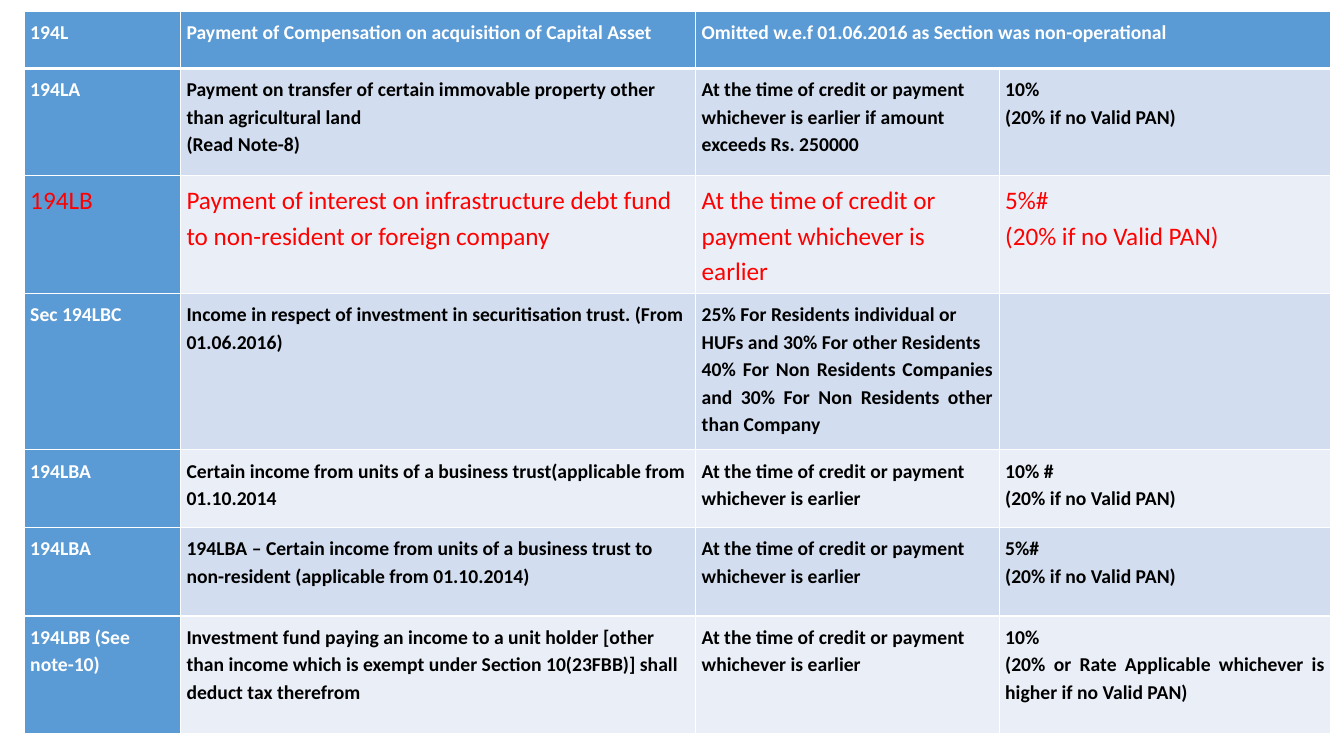
from lxml import etree
from pptx import Presentation
from pptx.dml.color import RGBColor
from pptx.enum import text
from pptx.oxml import ns
from pptx.util import Inches, Pt

COLORS = {"blue": "5B9BD5", "band": "D2DEEF", "pale": "EAEFF7",
          "white": "FFFFFF", "black": "000000", "red": "FF0000"}

ON_CREDIT = "At the time of credit or payment whichever is earlier"
NO_PAN = "(20% if no Valid PAN)"

# Section, nature of payment, time of deduction, rate; a newline starts a paragraph
ROWS = [
    ("194L", "Payment of Compensation on acquisition of Capital Asset",
     "Omitted w.e.f 01.06.2016 as Section was non-operational", ""),
    ("194LA", "Payment on transfer of certain immovable property other than "
     "agricultural land\n(Read Note-8)",
     ON_CREDIT + " if amount exceeds Rs. 250000", "10%\n" + NO_PAN),
    ("194LB", "Payment of interest on infrastructure debt fund to non-resident "
     "or foreign company", ON_CREDIT, "5%#\n" + NO_PAN),
    ("Sec 194LBC", "Income in respect of investment in securitisation trust. "
     "(From 01.06.2016)",
     "25% For Residents individual or HUFs and 30% For other Residents\n"
     "40% For Non Residents Companies and 30% For Non Residents other than Company", ""),
    ("194LBA", "Certain income from units of a business trust(applicable from 01.10.2014",
     ON_CREDIT, "10% #\n" + NO_PAN),
    ("194LBA", "194LBA – Certain income from units of a business trust to "
     "non-resident (applicable from 01.10.2014)", ON_CREDIT, "5%#\n" + NO_PAN),
    ("194LBB (See note-10)", "Investment fund paying an income to a unit holder "
     "[other than income which is exempt under Section 10(23FBB)] shall deduct "
     "tax therefrom", ON_CREDIT,
     "10%\n(20% or Rate Applicable whichever is higher if no Valid PAN)"),
]
WIDTHS = [1.55, 5.11, 3.01, 3.29]
HEIGHTS = [0.57, 1.06, 0.92, 1.55, 0.77, 0.88, 1.17]
RED_ROW = 2
INSET = Inches(0.06)


def set_borders(cell, row):
    """Thin white grid with a heavy rule under the header row."""
    heavy = {(0, "B"), (1, "T")}
    properties = cell._tc.get_or_add_tcPr()
    for position, side in enumerate("LRTB"):
        line = etree.Element(ns.qn("a:ln" + side))
        line.set("w", str(Pt(3 if (row, side) in heavy else 1)))
        fill = etree.SubElement(line, ns.qn("a:solidFill"))
        etree.SubElement(fill, ns.qn("a:srgbClr")).set("val", COLORS["white"])
        properties.insert(position, line)


def format_cell(cell, row, column):
    header = row == 0 or column == 0
    fill = "blue" if header else "band" if row % 2 else "pale"
    ink = "red" if row == RED_ROW else "white" if header else "black"
    cell.fill.solid()
    cell.fill.fore_color.rgb = RGBColor.from_string(COLORS[fill])
    cell.margin_left = cell.margin_right = INSET
    cell.margin_top = cell.margin_bottom = INSET
    set_borders(cell, row)
    for index, para in enumerate(cell.text_frame.paragraphs):
        para.line_spacing = 1.15
        para.alignment = text.PP_ALIGN.JUSTIFY if index else text.PP_ALIGN.LEFT
        for span in para.runs:
            span.font.name = "Calibri"
            span.font.size = Pt(18 if row == RED_ROW else 14)
            span.font.bold = row != RED_ROW
            span.font.color.rgb = RGBColor.from_string(COLORS[ink])


# Slide
deck = Presentation()
deck.slide_width, deck.slide_height = Inches(13.33), Inches(7.5)
page = deck.slides.add_slide(deck.slide_layouts[6])

# Table of sections and rates
table = page.shapes.add_table(
    len(ROWS), len(WIDTHS), Inches(0.24), Inches(0.11),
    Inches(sum(WIDTHS)), Inches(sum(HEIGHTS))).table
for column, width in zip(table.columns, WIDTHS):
    column.width = Inches(width)
for row, height in zip(table.rows, HEIGHTS):
    row.height = Inches(height)
for row, entries in enumerate(ROWS):
    for column, entry in enumerate(entries):
        cell = table.cell(row, column)
        cell.text_frame.text = entry
        format_cell(cell, row, column)
table.cell(0, 2).merge(table.cell(0, 3))

deck.save("out.pptx")
